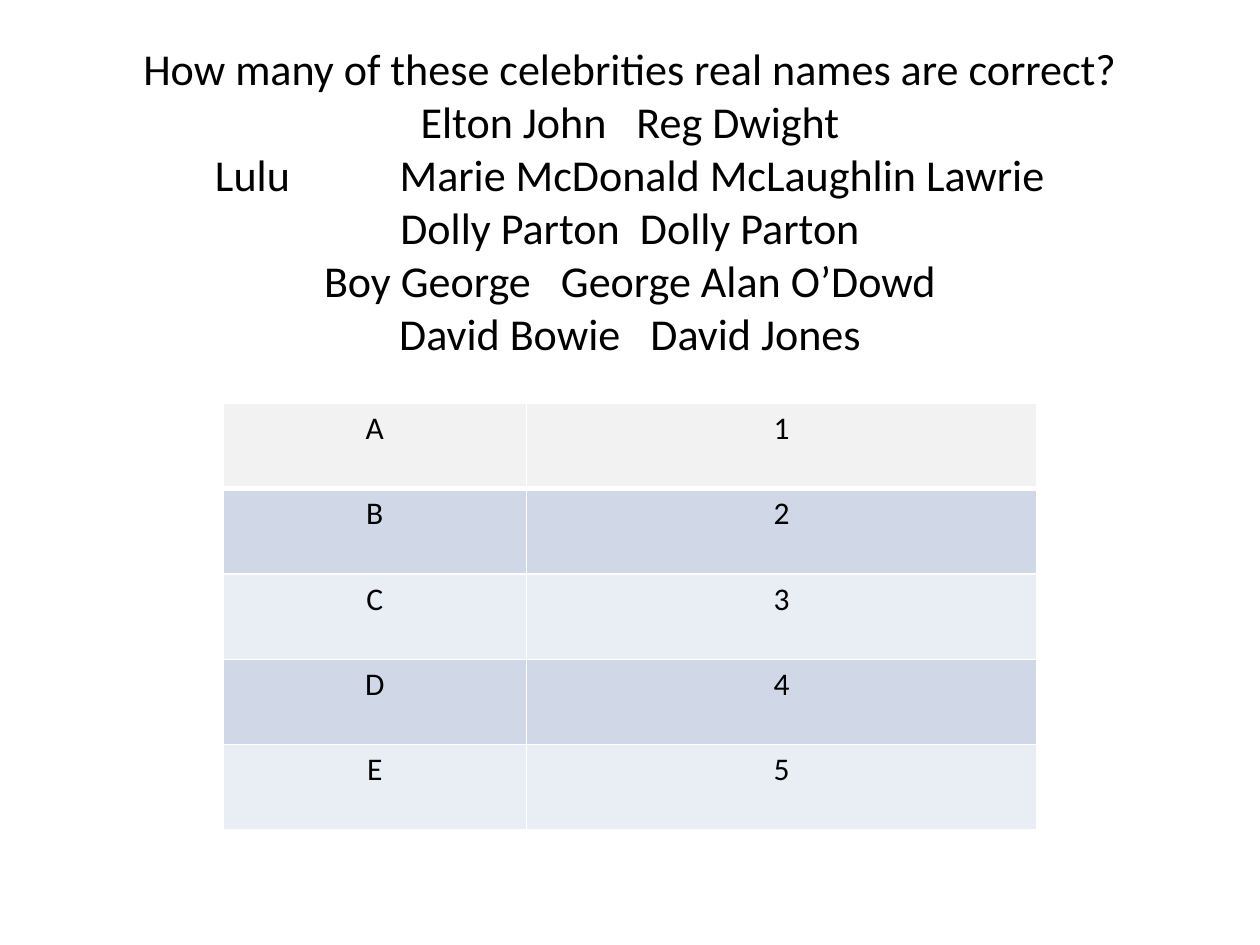
from lxml import etree
from pptx import Presentation
from pptx.dml.color import RGBColor
from pptx.enum import text
from pptx.oxml import ns
from pptx.util import Cm, Pt

TITLE_SIZE = 25.2
SPACE_WIDTH = 0.226 * TITLE_SIZE
QUESTION = "How many of these celebrities real names are correct?"
CELEBRITIES = [
    ("Elton John", "Reg Dwight", 3),
    ("Lulu", "Marie McDonald McLaughlin Lawrie", 11),
    ("Dolly Parton", "Dolly Parton", 2),
    ("Boy George", "George Alan O’Dowd", 3),
    ("David Bowie", "David Jones", 3),
]
ANSWERS = [("A", "1"), ("B", "2"), ("C", "3"), ("D", "4"), ("E", "5")]
HEADER_FILL = "F2F2F2"
BAND_FILLS = ["E9EDF4", "D0D8E8"]


def color(value):
    return RGBColor.from_string(value)


def format_paragraph(paragraph, size):
    paragraph.alignment = text.PP_ALIGN.CENTER
    paragraph.font.name = "Calibri"
    paragraph.font.size = Pt(size)
    paragraph.font.bold = False
    paragraph.font.color.rgb = color("000000")


def add_run(paragraph, content):
    run = paragraph.add_run()
    run.text = content
    return run


def add_gap(paragraph, spaces):
    run = add_run(paragraph, " ")
    spacing = round((spaces - 1) * SPACE_WIDTH * 100)
    run.font._element.set("spc", str(spacing))


def fill_title(title):
    title.left, title.top = Cm(1.27), Cm(0.76)
    title.width, title.height = Cm(22.86), Cm(6.55)
    frame = title.text_frame
    frame.word_wrap = True
    frame.auto_size = text.MSO_AUTO_SIZE.NONE
    frame.vertical_anchor = text.MSO_ANCHOR.MIDDLE
    paragraph = frame.paragraphs[0]
    format_paragraph(paragraph, TITLE_SIZE)
    add_run(paragraph, QUESTION)
    for stage_name, real_name, spaces in CELEBRITIES:
        paragraph.add_line_break()
        add_run(paragraph, stage_name)
        add_gap(paragraph, spaces)
        add_run(paragraph, real_name)


def set_border(cell, side, width):
    properties = cell._tc.get_or_add_tcPr()
    line = etree.Element(ns.qn(f"a:ln{side}"), w=str(Pt(width)))
    fill = etree.SubElement(line, ns.qn("a:solidFill"))
    etree.SubElement(fill, ns.qn("a:srgbClr"), val="FFFFFF")
    properties.insert("LRTB".index(side), line)


def fill_cell(cell, content, row):
    cell.text = content
    format_paragraph(cell.text_frame.paragraphs[0], 18)
    cell.fill.solid()
    cell.fill.fore_color.rgb = color(BAND_FILLS[row % 2] if row else HEADER_FILL)
    for side in "LRTB":
        below_header = (row, side) in [(0, "B"), (1, "T")]
        set_border(cell, side, 3 if below_header else 1)


def add_answers(slide):
    frame = slide.shapes.add_table(
        len(ANSWERS), 2, Cm(4.5), Cm(8.13), Cm(16.4), Cm(8.6))
    table = frame.table
    table.first_row = False
    table.horz_banding = False
    table.columns[0].width = Cm(6.11)
    table.columns[1].width = Cm(10.29)
    for row, answer in enumerate(ANSWERS):
        for column, content in enumerate(answer):
            fill_cell(table.cell(row, column), content, row)


def main():
    presentation = Presentation()
    presentation.slide_width, presentation.slide_height = Cm(25.4), Cm(19.05)
    slide = presentation.slides.add_slide(presentation.slide_layouts[5])
    fill_title(slide.shapes.title)
    add_answers(slide)
    presentation.save("out.pptx")


if __name__ == "__main__":
    main()
